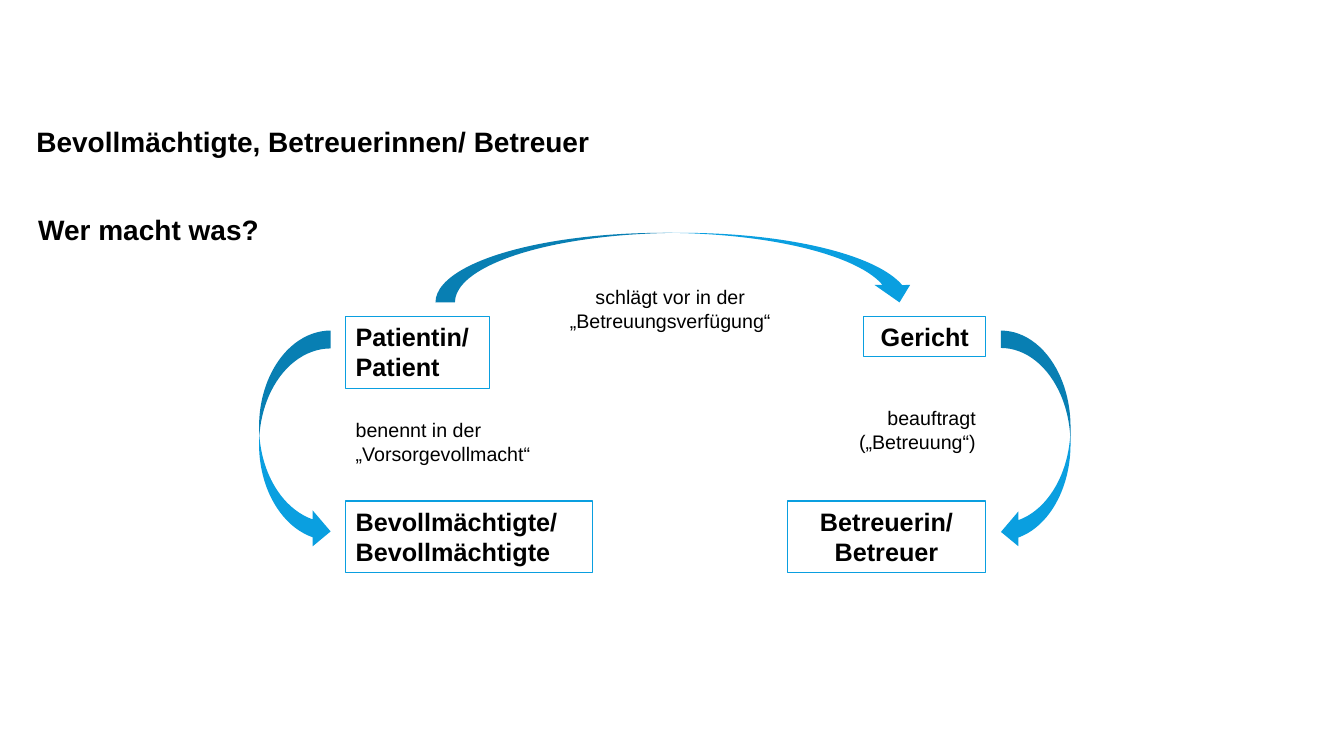
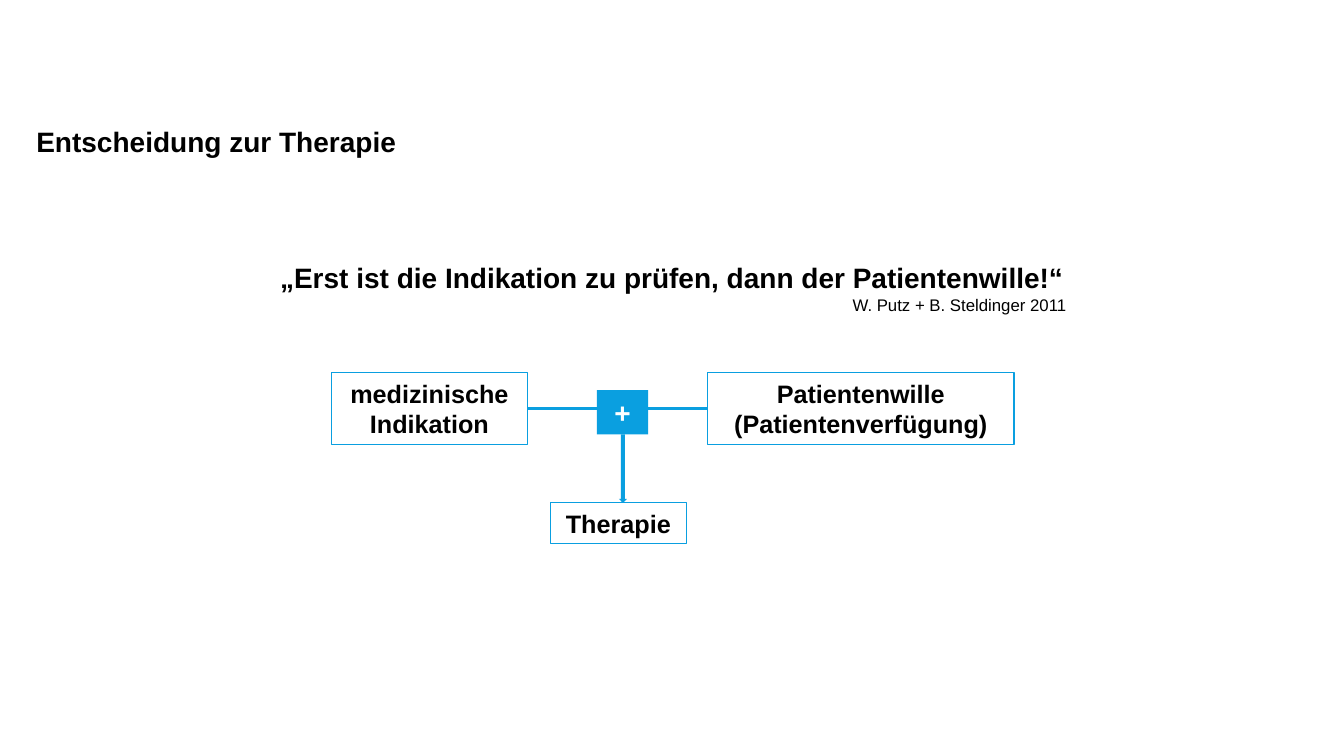
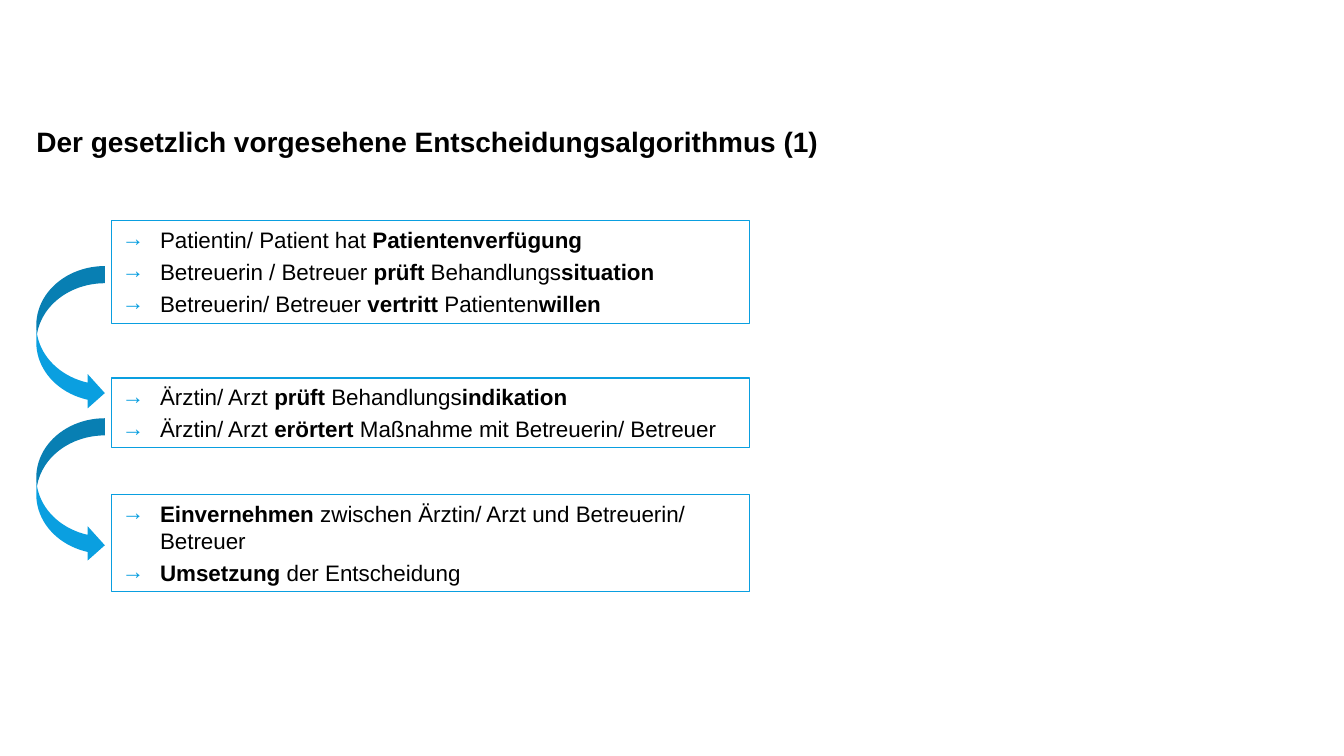
"""Build three slides on who decides about a patient's therapy."""

import dataclasses
import typing

import lxml.etree
import pptx
import pptx.dml.color
import pptx.enum.shapes
import pptx.enum.text
import pptx.oxml.ns
import pptx.presentation
import pptx.slide
import pptx.text.text
import pptx.util

BLUE = pptx.dml.color.RGBColor(0x0A, 0x9F, 0xE0)
BLACK = pptx.dml.color.RGBColor(0x00, 0x00, 0x00)
WHITE = pptx.dml.color.RGBColor(0xFF, 0xFF, 0xFF)
FONT = "Arial"
CELL = pptx.util.Inches(0.1)
COLS, ROWS = 133.33, 75
ALIGN = pptx.enum.text.PP_ALIGN
KIND = pptx.enum.shapes.MSO_SHAPE
qn = pptx.oxml.ns.qn


@dataclasses.dataclass(frozen=True)
class Area:
    col: float
    row: float
    wide: float
    high: float

    def place(self) -> tuple[int, ...]:
        return tuple(map(grid, (self.col, self.row, self.wide, self.high)))


@dataclasses.dataclass(frozen=True)
class Label:
    area: Area
    lines: tuple[str, ...]
    align: ALIGN = ALIGN.LEFT


@dataclasses.dataclass(frozen=True)
class Arrow:
    area: Area
    kind: KIND
    bends: tuple[float, ...] = ()


TITLE = Area(3.6, 11.3, 126, 5.4)


def grid(cells: float) -> int:
    return round(cells * CELL)


def add_mark(para: typing.Any) -> None:
    props = para._p.get_or_add_pPr()
    props.set("marL", str(grid(3.8)))
    props.set("indent", str(-grid(3.8)))
    tint = lxml.etree.SubElement(props, qn("a:buClr"))
    lxml.etree.SubElement(tint, qn("a:srgbClr"), val=str(BLUE))
    lxml.etree.SubElement(props, qn("a:buFont"), typeface=FONT)
    lxml.etree.SubElement(props, qn("a:buChar"), char="→")


def write(frame: pptx.text.text.TextFrame, *lines: str, size: float = 18,
          bold: bool = False, ink: pptx.dml.color.RGBColor = BLACK,
          align: ALIGN = ALIGN.LEFT, mark: bool = False, gap: float = 0) -> None:
    """Add one paragraph per line; asterisks switch the weight."""
    for line in lines:
        first = frame.paragraphs[0]
        para = frame.add_paragraph() if first.runs else first
        if mark:
            add_mark(para)
        para.alignment = align
        para.space_before = pptx.util.Pt(gap if first.runs else 0)
        for turn, part in enumerate(line.split("*")):
            if part:
                run = para.add_run()
                run.text = part
                run.font.name = FONT
                run.font.size = pptx.util.Pt(size)
                run.font.bold = bold ^ (turn % 2 == 1)
                run.font.color.rgb = ink


def add_slide(deck: pptx.presentation.Presentation, title: str) -> pptx.slide.Slide:
    slide = deck.slides.add_slide(deck.slide_layouts[5])
    head = slide.shapes.title
    head.left, head.top, head.width, head.height = TITLE.place()
    frame = head.text_frame
    frame.auto_size = pptx.enum.text.MSO_AUTO_SIZE.NONE
    frame.vertical_anchor = pptx.enum.text.MSO_ANCHOR.MIDDLE
    frame.margin_left = frame.margin_right = 0
    frame.margin_top = frame.margin_bottom = 0
    write(frame, title, size=20, bold=True)
    return slide


def add_text(slide: pptx.slide.Slide, area: Area) -> pptx.text.text.TextFrame:
    frame = slide.shapes.add_textbox(*area.place()).text_frame
    frame.word_wrap = True
    return frame


def add_form(slide: pptx.slide.Slide, area: Area, kind: KIND = KIND.RECTANGLE,
             solid: bool = True, bends: tuple[float, ...] = ()) -> pptx.text.text.TextFrame:
    form = slide.shapes.add_shape(kind, *area.place())
    form.shadow.inherit = False
    for spot, bend in enumerate(bends):
        form.adjustments[spot] = bend
    if solid:
        form.fill.solid()
        form.fill.fore_color.rgb = BLUE
        form.line.fill.background()
    else:
        form.fill.background()
        form.line.color.rgb = BLUE
        form.line.width = pptx.util.Pt(0.75)
    frame = form.text_frame
    frame.word_wrap = True
    frame.vertical_anchor = pptx.enum.text.MSO_ANCHOR.TOP
    return frame


def add_boxes(slide: pptx.slide.Slide, boxes: tuple[Label, ...]) -> None:
    for box in boxes:
        frame = add_form(slide, box.area, solid=False)
        write(frame, *box.lines, bold=True, align=box.align)


def add_arrows(slide: pptx.slide.Slide, arrows: tuple[Arrow, ...]) -> None:
    for arrow in arrows:
        add_form(slide, arrow.area, arrow.kind, bends=arrow.bends)


def add_line(slide: pptx.slide.Slide, start: float, end: float, row: float) -> None:
    line = slide.shapes.add_connector(
        pptx.enum.shapes.MSO_CONNECTOR.STRAIGHT,
        grid(start), grid(row), grid(end), grid(row))
    line.line.color.rgb = BLUE
    line.line.width = pptx.util.Pt(2)
    lxml.etree.SubElement(line._element.spPr, qn("a:effectLst"))


def draw_roles(deck: pptx.presentation.Presentation) -> None:
    slide = add_slide(deck, "Bevollmächtigte, Betreuerinnen/ Betreuer")
    write(add_text(slide, Area(2.8, 20.6, 80, 4.4)), "Wer macht was?", size=20, bold=True)
    left, right, top, low = 34.3, 97.8, 31.4, 49.7
    add_boxes(slide, (
        Label(Area(left, top, 14.3, 7.1), ("Patientin/ Patient",)),
        Label(Area(left, low, 24.5, 7.1), ("Bevollmächtigte/", "Bevollmächtigte")),
        Label(Area(right - 12.1, top, 12.1, 4), ("Gericht",), ALIGN.CENTER),
        Label(Area(right - 19.7, low, 19.7, 7.1), ("Betreuerin/", "Betreuer"), ALIGN.CENTER),
    ))
    notes = (
        Label(Area(left, 41, 19.7, 5.7), ("benennt in der „Vorsorgevollmacht“",)),
        Label(Area(right - 13.7, 39.8, 13.7, 5.7), ("beauftragt („Betreuung“)",), ALIGN.RIGHT),
        Label(Area(55.2, 27.8, 22.6, 5.7), ("schlägt vor in der „Betreuungsverfügung“",),
              ALIGN.CENTER),
    )
    for note in notes:
        write(add_text(slide, note.area), *note.lines, size=14, align=note.align)
    add_arrows(slide, (
        Arrow(Area(43.2, 23.1, 47.8, 6.9), KIND.CURVED_DOWN_ARROW, (0.28, 0.51, 0.25)),
        Arrow(Area(99.3, 32.8, 6.9, 21.7), KIND.CURVED_LEFT_ARROW),
        Arrow(Area(25.7, 32.8, 7.1, 21.7), KIND.CURVED_RIGHT_ARROW),
    ))


def draw_choice(deck: pptx.presentation.Presentation) -> None:
    slide = add_slide(deck, "Entscheidung zur Therapie")
    quote = add_text(slide, Area(26.8, 25.4, 80, 6.4))
    write(quote, "„Erst ist die Indikation zu prüfen, dann der Patientenwille!“", size=20, bold=True)
    write(quote, "W. Putz + B. Steldinger 2011", size=12, align=ALIGN.RIGHT)
    top = 37
    add_boxes(slide, (
        Label(Area(32.9, top, 19.4, 7.1), ("medizinische Indikation",), ALIGN.CENTER),
        Label(Area(70.2, top, 30.4, 7.1), ("Patientenwille", "(Patientenverfügung)"),
              ALIGN.CENTER),
        Label(Area(54.6, 49.9, 13.5, 4), ("Therapie",), ALIGN.CENTER),
    ))
    add_line(slide, 52.3, 70.2, top + 3.55)
    plus = add_form(slide, Area(59.2, 38.7, 5.1, 4.4))
    write(plus, "+", size=20, bold=True, ink=WHITE, align=ALIGN.CENTER)
    add_form(slide, Area(61.4, 43.1, 0.8, 6.8), KIND.DOWN_ARROW)


def draw_steps(deck: pptx.presentation.Presentation) -> None:
    slide = add_slide(deck, "Der gesetzlich vorgesehene Entscheidungsalgorithmus (1)")
    steps = (
        (21.9, 10.2, (
            "Patientin/ Patient hat *Patientenverfügung*",
            "Betreuerin / Betreuer *prüft* Behandlungs*situation*",
            "Betreuerin/ Betreuer *vertritt* Patienten*willen*")),
        (37.5, 6.9, (
            "Ärztin/ Arzt *prüft* Behandlungs*indikation*",
            "Ärztin/ Arzt *erörtert* Maßnahme mit Betreuerin/ Betreuer")),
        (49.1, 9.6, (
            "*Einvernehmen *zwischen Ärztin/ Arzt und Betreuerin/ Betreuer",
            "*Umsetzung* der Entscheidung")),
    )
    for row, high, lines in steps:
        frame = add_form(slide, Area(11.1, row, 63.3, high), solid=False)
        write(frame, *lines, size=16, mark=True, gap=3.7)
    add_arrows(slide, tuple(
        Arrow(Area(3.6, row, 6.8, 14.3), KIND.CURVED_RIGHT_ARROW) for row in (26.4, 41.5)))


def main() -> None:
    deck = pptx.Presentation()
    deck.slide_width, deck.slide_height = grid(COLS), grid(ROWS)
    for draw in (draw_roles, draw_choice, draw_steps):
        draw(deck)
    deck.save("out.pptx")


if __name__ == "__main__":
    main()
